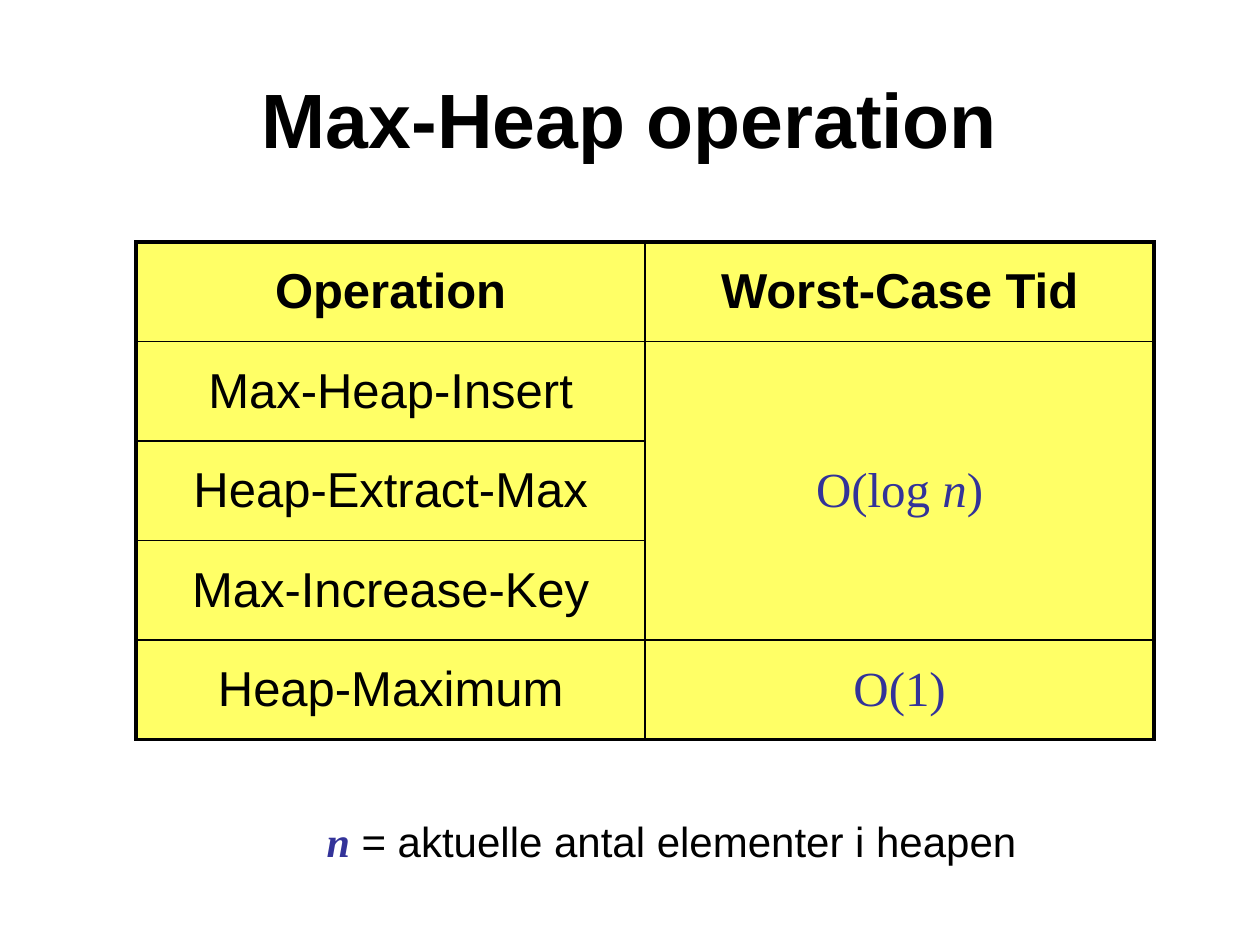
import dataclasses

import pptx
import pptx.dml.color
import pptx.enum.text
import pptx.oxml
import pptx.oxml.ns
import pptx.util


@dataclasses.dataclass(frozen=True)
class Theme:
    ink: str = "000000"
    formula: str = "333399"
    cell: str = "FFFF66"
    sans: str = "Arial"
    serif: str = "Times New Roman"
    title_size: int = 44
    table_size: int = 28
    note_size: int = 24
    outer_line: float = 2.25
    inner_line: float = 1


THEME = Theme()


def span(text, **style):
    """Pair a piece of text with its format: font, color, bold, italic."""
    return text, style


def formula(text, **style):
    return span(text, font=THEME.serif, color=THEME.formula, **style)


def write_spans(frame, spans, size):
    """Fill a text frame with one centred paragraph."""
    frame.vertical_anchor = pptx.enum.text.MSO_ANCHOR.MIDDLE
    para = frame.paragraphs[0]
    para.alignment = pptx.enum.text.PP_ALIGN.CENTER
    for text, style in spans:
        run = para.add_run()
        run.text = text
        run.font.size = pptx.util.Pt(size)
        run.font.name = style.get("font", THEME.sans)
        run.font.bold = style.get("bold", False)
        run.font.italic = style.get("italic", False)
        run.font.color.rgb = pptx.dml.color.RGBColor.from_string(
            style.get("color", THEME.ink))


def set_borders(cell, widths):
    """Draw cell edges; widths maps L, R, T, B, in that order, to points."""
    properties = cell._tc.get_or_add_tcPr()
    for index, (side, width) in enumerate(widths.items()):
        line = pptx.oxml.parse_xml(
            f'<a:ln{side} {pptx.oxml.ns.nsdecls("a")} w="{pptx.util.Pt(width)}">'
            f'<a:solidFill><a:srgbClr val="{THEME.ink}"/></a:solidFill>'
            f'</a:ln{side}>')
        properties.insert(index, line)


class SlideBuilder:
    """Places elements by shares of the slide's width and height."""

    def __init__(self, deck, theme):
        self.deck = deck
        self.theme = theme
        self.slide = deck.slides.add_slide(deck.slide_layouts[6])

    def area(self, left, top, width, height):
        across, down = self.deck.slide_width, self.deck.slide_height
        return (round(left * across), round(top * down),
                round(width * across), round(height * down))

    def text(self, area, spans, size):
        box = self.slide.shapes.add_textbox(*self.area(*area))
        box.text_frame.word_wrap = True
        write_spans(box.text_frame, spans, size)

    def table(self, area, rows, merge):
        """Build a table; merge names the first and last (row, column)."""
        last_row, last_column = len(rows) - 1, len(rows[0]) - 1
        frame = self.slide.shapes.add_table(
            len(rows), len(rows[0]), *self.area(*area))
        table = frame.table
        table.first_row = table.horz_banding = False
        first, last = merge
        table.cell(*first).merge(table.cell(*last))
        outer, inner = self.theme.outer_line, self.theme.inner_line
        for r, row in enumerate(rows):
            for c, spans in enumerate(row):
                cell = table.cell(r, c)
                cell.fill.solid()
                cell.fill.fore_color.rgb = pptx.dml.color.RGBColor.from_string(
                    self.theme.cell)
                edges = {"L": outer if c == 0 else inner,
                         "R": outer if c == last_column else inner}
                if not cell.is_spanned:
                    edges["T"] = outer if r == 0 else inner
                    edges["B"] = outer if r == last_row else inner
                set_borders(cell, edges)
                cell.vertical_anchor = pptx.enum.text.MSO_ANCHOR.MIDDLE
                if spans:
                    write_spans(cell.text_frame, spans, self.theme.table_size)


def main():
    deck = pptx.Presentation()
    deck.slide_width = pptx.util.Inches(10)
    deck.slide_height = pptx.util.Inches(7.5)
    page = SlideBuilder(deck, THEME)

    page.text((0.05, 0.04, 0.9, 0.17),
              [span("Max-Heap operation", bold=True)], THEME.title_size)

    log_time = [formula("O(log "), formula("n", italic=True), formula(")")]
    rows = [
        ([span("Operation", bold=True)], [span("Worst-Case Tid", bold=True)]),
        ([span("Max-Heap-Insert")], log_time),
        ([span("Heap-Extract-Max")], None),
        ([span("Max-Increase-Key")], None),
        ([span("Heap-Maximum")], [formula("O(1)")]),
    ]
    page.table((0.108, 1.92 / 7.5, 0.808, 3.95 / 7.5), rows,
               merge=((1, 1), (3, 1)))

    page.text((0.233, 6.42 / 7.5, 0.6, 0.5 / 7.5),
              [formula("n", bold=True, italic=True),
               span(" = aktuelle antal elementer i heapen")],
              THEME.note_size)
    deck.save("out.pptx")


if __name__ == "__main__":
    main()
